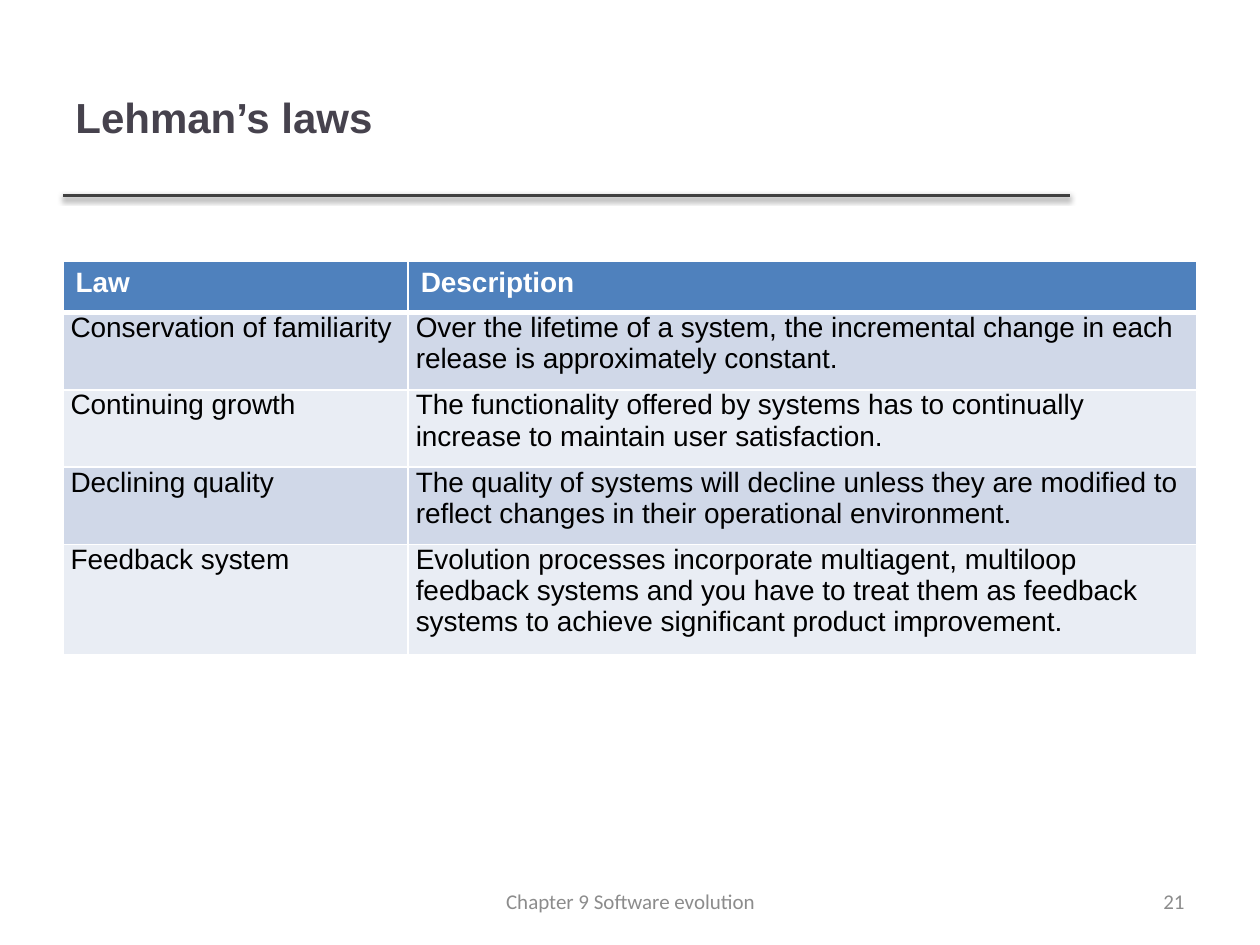
from dataclasses import dataclass

import pptx
import pptx.dml.color
import pptx.enum.shapes
import pptx.enum.text
import pptx.oxml
import pptx.oxml.ns
import pptx.util

Pt = pptx.util.Pt
Align = pptx.enum.text.PP_ALIGN
Anchor = pptx.enum.text.MSO_ANCHOR

COLORS = {
    "title": "46424D", "rule": "404040", "header": "4F81BD", "odd": "D0D8E8",
    "even": "E9EDF4", "white": "FFFFFF", "black": "000000", "footer": "8C8C8C",
}
# The slide is a grid of 100 columns by 75 rows of square cells
COLUMNS, ROWS = 100, 75
CELL = pptx.util.Inches(10) // COLUMNS
LEFT = 5

LAWS = [
    ("Law", "Description"),
    ("Conservation of familiarity",
     "Over the lifetime of a system, the incremental change in each release "
     "is approximately constant."),
    ("Continuing growth",
     "The functionality offered by systems has to continually increase "
     "to maintain user satisfaction."),
    ("Declining quality",
     "The quality of systems will decline unless they are modified to reflect "
     "changes in their operational environment."),
    ("Feedback system",
     "Evolution processes incorporate multiagent, multiloop feedback systems and "
     "you have to treat them as feedback systems to achieve significant product "
     "improvement."),
]


@dataclass
class TextStyle:
    size: int
    color: str
    font: str = "Arial"
    bold: bool = False


@dataclass
class Label:
    text: str
    left: float
    top: float
    width: float
    height: float
    style: TextStyle
    align: Align = Align.LEFT


FOOTER = TextStyle(12, "footer", "Calibri")
LABELS = [
    Label("Lehman’s laws", LEFT, 3, 79.8, 12.5, TextStyle(24, "title", bold=True)),
    Label("21", 71.7, 69.5, 23.3, 4, FOOTER, Align.RIGHT),
    Label("Chapter 9 Software evolution", 34.2, 69.5, 31.7, 4, FOOTER, Align.CENTER),
]


def grid(cells: float) -> int:
    return round(cells * CELL)


def rgb(name: str) -> pptx.dml.color.RGBColor:
    return pptx.dml.color.RGBColor.from_string(COLORS[name])


def xml(markup: str):
    """Parse an element whose opening tag carries the marker NS."""
    return pptx.oxml.parse_xml(markup.replace("NS", pptx.oxml.ns.nsdecls("a"), 1))


def write(frame, text: str, style: TextStyle):
    paragraph = frame.paragraphs[0]
    run = paragraph.add_run()
    run.text = text
    run.font.name, run.font.size, run.font.bold = style.font, Pt(style.size), style.bold
    run.font.color.rgb = rgb(style.color)
    return paragraph


def draw_label(slide, label: Label) -> None:
    box = slide.shapes.add_textbox(
        *map(grid, (label.left, label.top, label.width, label.height)))
    box.text_frame.word_wrap = True
    box.text_frame.vertical_anchor = Anchor.MIDDLE
    write(box.text_frame, label.text, label.style).alignment = label.align


def draw_title_rule(slide) -> None:
    rule = slide.shapes.add_connector(
        pptx.enum.shapes.MSO_CONNECTOR.STRAIGHT,
        grid(LEFT), grid(15.5), grid(84.9), grid(15.5))
    rule.line.color.rgb = rgb("rule")
    rule.line.width = Pt(2)
    rule._element.spPr.append(xml(
        f'<a:effectLst NS><a:outerShdw blurRad="{Pt(3.1)}" dist="{Pt(1.6)}" '
        'dir="5400000" rotWithShape="0">'
        f'<a:srgbClr val="{COLORS["black"]}"><a:alpha val="38000"/></a:srgbClr>'
        '</a:outerShdw></a:effectLst>'))


def style_cell(cell, fill: str, bottom_width: int) -> None:
    # Borders come before the fill in the cell's properties
    properties = cell._tc.get_or_add_tcPr()
    for side, width in (("L", 1), ("R", 1), ("T", 1), ("B", bottom_width)):
        properties.append(xml(
            f'<a:ln{side} NS w="{Pt(width)}"><a:solidFill>'
            f'<a:srgbClr val="{COLORS["white"]}"/></a:solidFill></a:ln{side}>'))
    cell.fill.solid()
    cell.fill.fore_color.rgb = rgb(fill)


def draw_laws(slide) -> None:
    frame = slide.shapes.add_table(
        len(LAWS), 2, grid(LEFT), grid(20.7), grid(90), grid(31.2))
    table = frame.table
    for column, width in zip(table.columns, (27.4, 62.6)):
        column.width = grid(width)
    for r, law in enumerate(LAWS):
        header = r == 0
        table.rows[r].height = grid(4.1)
        fill = "header" if header else ("even", "odd")[r % 2]
        style = TextStyle(16, "white" if header else "black", bold=header)
        for c, text in enumerate(law):
            cell = table.cell(r, c)
            style_cell(cell, fill, 3 if header else 1)
            paragraph = write(cell.text_frame, text, style)
            if not header:
                cell.margin_left = cell.margin_right = grid(0.6)
                cell.margin_top, cell.margin_bottom = 0, grid(0.8)
                paragraph.space_after = Pt(6)


def main() -> None:
    deck = pptx.Presentation()
    deck.slide_width, deck.slide_height = grid(COLUMNS), grid(ROWS)
    slide = deck.slides.add_slide(deck.slide_layouts[6])

    # Title and its rule, the table of laws, then the footer
    title, *footers = LABELS
    draw_title_rule(slide)
    draw_label(slide, title)
    draw_laws(slide)
    for footer in footers:
        draw_label(slide, footer)

    deck.save("out.pptx")


if __name__ == "__main__":
    main()
